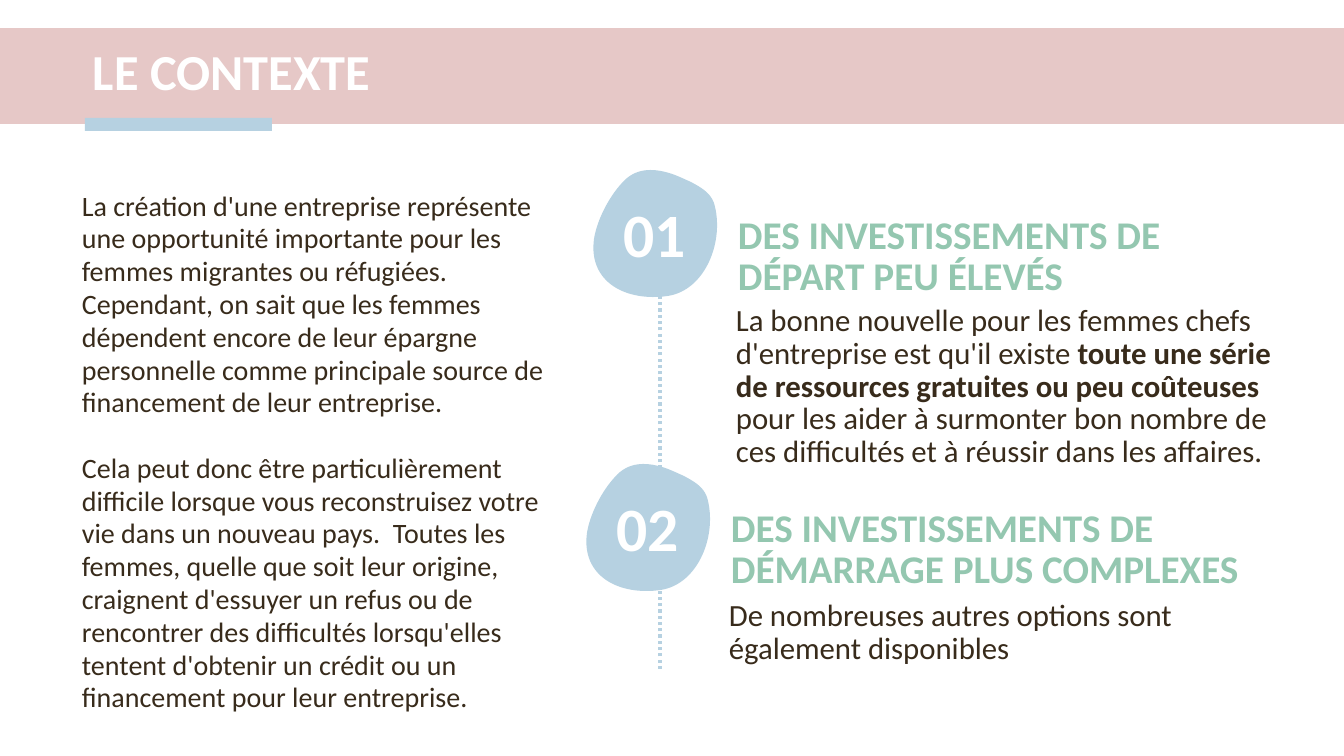
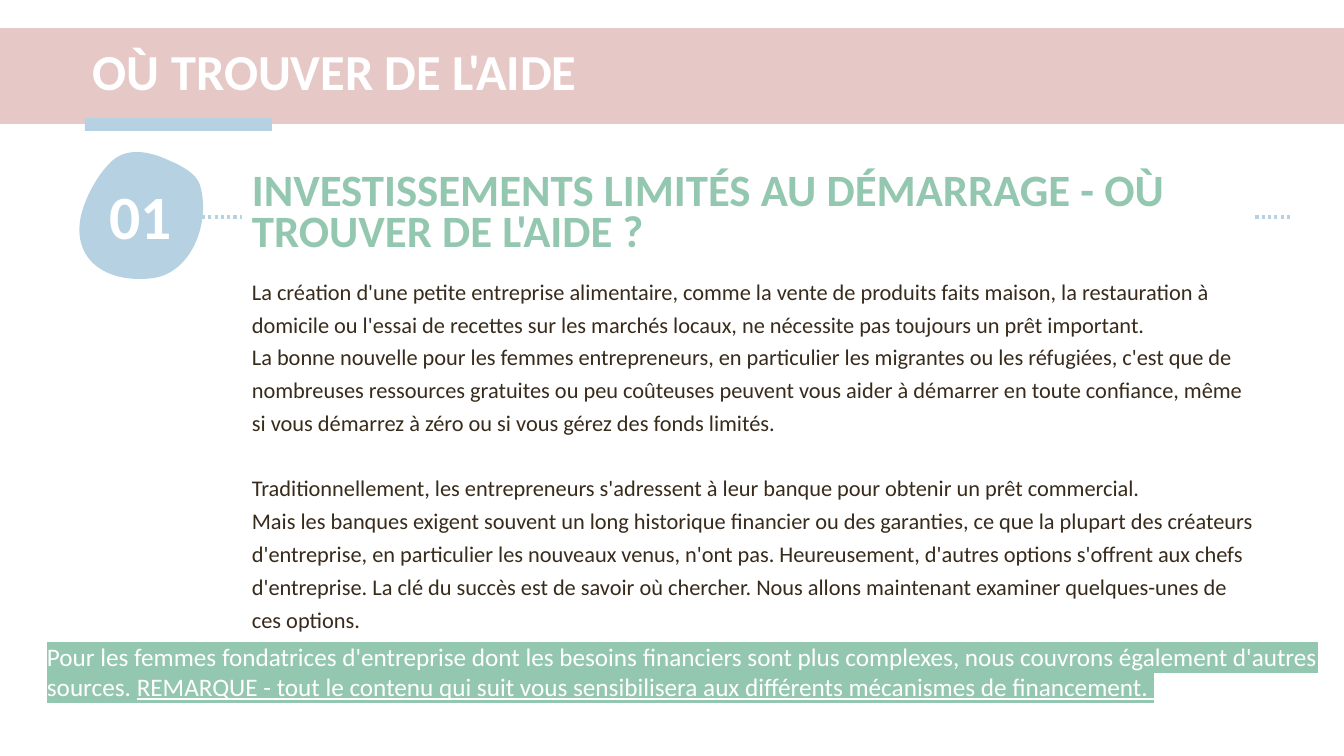
from lxml.etree import SubElement
from pptx import Presentation
from pptx.dml.color import RGBColor as RGB
from pptx.enum.dml import MSO_LINE as Dash
from pptx.enum.shapes import MSO_CONNECTOR as Link, MSO_SHAPE as Shape
from pptx.enum.text import MSO_ANCHOR as Anchor, PP_ALIGN as Align
from pptx.oxml.ns import qn
from pptx.util import Pt

PX = 914400 / 100.8
WIDE, HIGH = 1344, 756
FONT = "Calibri"
INK = {
    "pink": "E6C8C7",
    "blue": "B6D1E1",
    "green": "94C7B0",
    "brown": "382B1B",
    "white": "FFFFFF",
}
LEAD = 23.4
HEAD = {"ink": "green", "bold": True, "lead": 29.4}

BAND = (0, 28, WIDE, 96)
TAB = (85, 118, 187, 13)
TITLE = (83, 34, 1203, 80)

# Blob outline: a start, then cubic curves of two handles and an end
SIZE = (123, 127)
START = (75, 3)
CURVES = [
    ((58, -2), (41, -2), (28, 13)),
    ((15, 27), (3, 50), (0, 69)),
    ((-6, 113), (33, 132), (74, 126)),
    ((112, 120), (131, 70), (120, 33)),
    ((116, 22), (106, 17), (97, 12)),
    ((90, 9), (82, 5), (75, 3)),
]

# A text is a list of paragraphs; a paragraph is a string or a list of runs
INTRO = [
    "La création d'une entreprise représente une opportunité importante pour les "
    "femmes migrantes ou réfugiées. Cependant, on sait que les femmes dépendent "
    "encore de leur épargne personnelle comme principale source de financement "
    "de leur entreprise.",
    "Cela peut donc être particulièrement difficile lorsque vous reconstruisez "
    "votre vie dans un nouveau pays.  Toutes les femmes, quelle que soit leur "
    "origine, craignent d'essuyer un refus ou de rencontrer des difficultés "
    "lorsqu'elles tentent d'obtenir un crédit ou un financement pour leur "
    "entreprise.",
]
# Number, blob corner, heading box, heading, body box, body
ITEMS = [
    ("01", (594, 170),
     (728, 211, 501, 91), "DES INVESTISSEMENTS DE DÉPART PEU ÉLEVÉS",
     (726, 300, 568, 199),
     [("La bonne nouvelle pour les femmes chefs d'entreprise est qu'il existe ", {}),
      ("toute une série de ressources gratuites ou peu coûteuses ", {"bold": True}),
      ("pour les aider à surmonter bon nombre de ces difficultés et à réussir "
       "dans les affaires.", {})]),
    ("02", (587, 464),
     (721, 504, 552, 91), "DES INVESTISSEMENTS DE DÉMARRAGE PLUS COMPLEXES",
     (719, 595, 554, 92),
     "De nombreuses autres options sont également disponibles"),
]
HELP = [
    "La création d'une petite entreprise alimentaire, comme la vente de produits "
    "faits maison, la restauration à domicile ou l'essai de recettes sur les "
    "marchés locaux, ne nécessite pas toujours un prêt important.",
    "La bonne nouvelle pour les femmes entrepreneurs, en particulier les migrantes "
    "ou les réfugiées, c'est que de nombreuses ressources gratuites ou peu "
    "coûteuses peuvent vous aider à démarrer en toute confiance, même si vous "
    "démarrez à zéro ou si vous gérez des fonds limités.",
    "Traditionnellement, les entrepreneurs s'adressent à leur banque pour obtenir "
    "un prêt commercial.\n"
    "Mais les banques exigent souvent un long historique financier ou des "
    "garanties, ce que la plupart des créateurs d'entreprise, en particulier les "
    "nouveaux venus, n'ont pas. Heureusement, d'autres options s'offrent aux chefs "
    "d'entreprise. La clé du succès est de savoir où chercher. Nous allons "
    "maintenant examiner quelques-unes de ces options.",
]
NOTE = [[
    ("Pour les femmes fondatrices d'entreprise dont les besoins financiers sont "
     "plus complexes, nous couvrons également d'autres sources. ", {}),
    ("REMARQUE - tout le contenu qui suit vous sensibilisera aux différents "
     "mécanismes de financement. ", {"underline": True}),
]]


def emu(*vals):
    return [round(v * PX) for v in vals]


def tint(name):
    return RGB.from_string(INK[name])


def paint(shape, ink):
    shape.shadow.inherit = False
    shape.fill.solid()
    shape.fill.fore_color.rgb = tint(ink)
    shape.line.fill.background()


def put(host, box, paras, size, ink="brown", bold=False, lead=None, gaps=(),
        align=Align.LEFT, anchor=Anchor.TOP, fill=None, mark=None):
    """Add a text box; gaps lists the paragraphs that follow an empty line."""
    shape = host.shapes.add_textbox(*emu(*box))
    if fill:
        paint(shape, fill)
    frame = shape.text_frame
    frame.word_wrap = True
    frame.vertical_anchor = anchor
    for i, runs in enumerate(paras):
        para = frame.add_paragraph() if i else frame.paragraphs[0]
        para.alignment = align
        if lead:
            para.line_spacing = Pt(lead) if lead > 5 else lead
        if i in gaps:
            para.space_before = Pt(lead)
        for text, style in [(runs, {})] if isinstance(runs, str) else runs:
            for n, part in enumerate(text.split("\n")):
                if n:
                    para.add_line_break()
                run = para.add_run()
                run.text = part
                font = run.font
                font.name, font.size = FONT, Pt(size)
                font.bold = style.get("bold", bold)
                font.underline = style.get("underline")
                font.color.rgb = tint(ink)
                if mark:
                    props = run._r.get_or_add_rPr()
                    glow = SubElement(props, qn("a:highlight"))
                    SubElement(glow, qn("a:srgbClr"), val=INK[mark])
                    props.find(qn("a:solidFill")).addnext(glow)


def dots(slide, *ends):
    line = slide.shapes.add_connector(Link.STRAIGHT, *emu(*ends))
    line.line.color.rgb = tint("blue")
    line.line.width = Pt(2.25)
    line.line.dash_style = Dash.ROUND_DOT
    SubElement(line._element.spPr, qn("a:effectLst"))


def bend(shape):
    """Swap the straight sides of a freeform for the blob's curves."""
    track = next(shape._element.iter(qn("a:path")))
    for side in list(track):
        track.remove(side)
    for key, val in zip("wh", emu(*SIZE)):
        track.set(key, str(val))
    for tag, spots in [("moveTo", [START])] + [("cubicBezTo", c) for c in CURVES]:
        step = SubElement(track, qn("a:" + tag))
        for spot in spots:
            x, y = emu(*spot)
            SubElement(step, qn("a:pt"), x=str(x), y=str(y))
    SubElement(track, qn("a:close"))


def blob(slide, num, spot):
    x, y = spot
    group = slide.shapes.add_group_shape()
    pen = group.shapes.build_freeform(*emu(x + START[0], y + START[1]))
    pen.add_line_segments([emu(x + p, y + q) for _, _, (p, q) in CURVES])
    shape = pen.convert_to_shape()
    shape.left, shape.top, shape.width, shape.height = emu(x, y, *SIZE)
    bend(shape)
    paint(shape, "blue")
    put(group, (x, y + 62, 122, 102), [num], 44, "white", bold=True, lead=LEAD,
        align=Align.CENTER)


def start(deck, title):
    """Add a slide with the band, tab and title."""
    slide = deck.slides.add_slide(deck.slide_layouts[6])
    for box, ink in ((BAND, "pink"), (TAB, "blue")):
        paint(slide.shapes.add_shape(Shape.RECTANGLE, *emu(*box)), ink)
    put(slide, TITLE, [title], 36, "white", bold=True, lead=0.9,
        anchor=Anchor.MIDDLE)
    return slide


def main():
    deck = Presentation()
    deck.slide_width, deck.slide_height = emu(WIDE, HIGH)

    slide = start(deck, "LE CONTEXTE")
    put(slide, (72, 184, 487, 366), INTRO, 20, lead=LEAD, gaps=(1,))
    dots(slide, 660, 669, 660, 190)
    for num, spot, top, head, box, body in ITEMS:
        put(slide, top, [head], 28, **HEAD)
        blob(slide, num, spot)
        put(slide, box, [body], 22, lead=LEAD)

    slide = start(deck, "OÙ TROUVER DE L'AIDE")
    dots(slide, 1290, 217, 91, 217)
    put(slide, (242, 169, 1011, 50),
        ["INVESTISSEMENTS LIMITÉS AU DÉMARRAGE - OÙ TROUVER DE L'AIDE ?"], 32,
        fill="white", **HEAD)
    blob(slide, "01", (80, 152))
    put(slide, (242, 267, 1027, 356), HELP, 16, lead=LEAD, gaps=(2,))
    put(slide, (37, 636, 1293, 72), NOTE, 18, "white", mark="green")

    deck.save("out.pptx")


if __name__ == "__main__":
    main()
